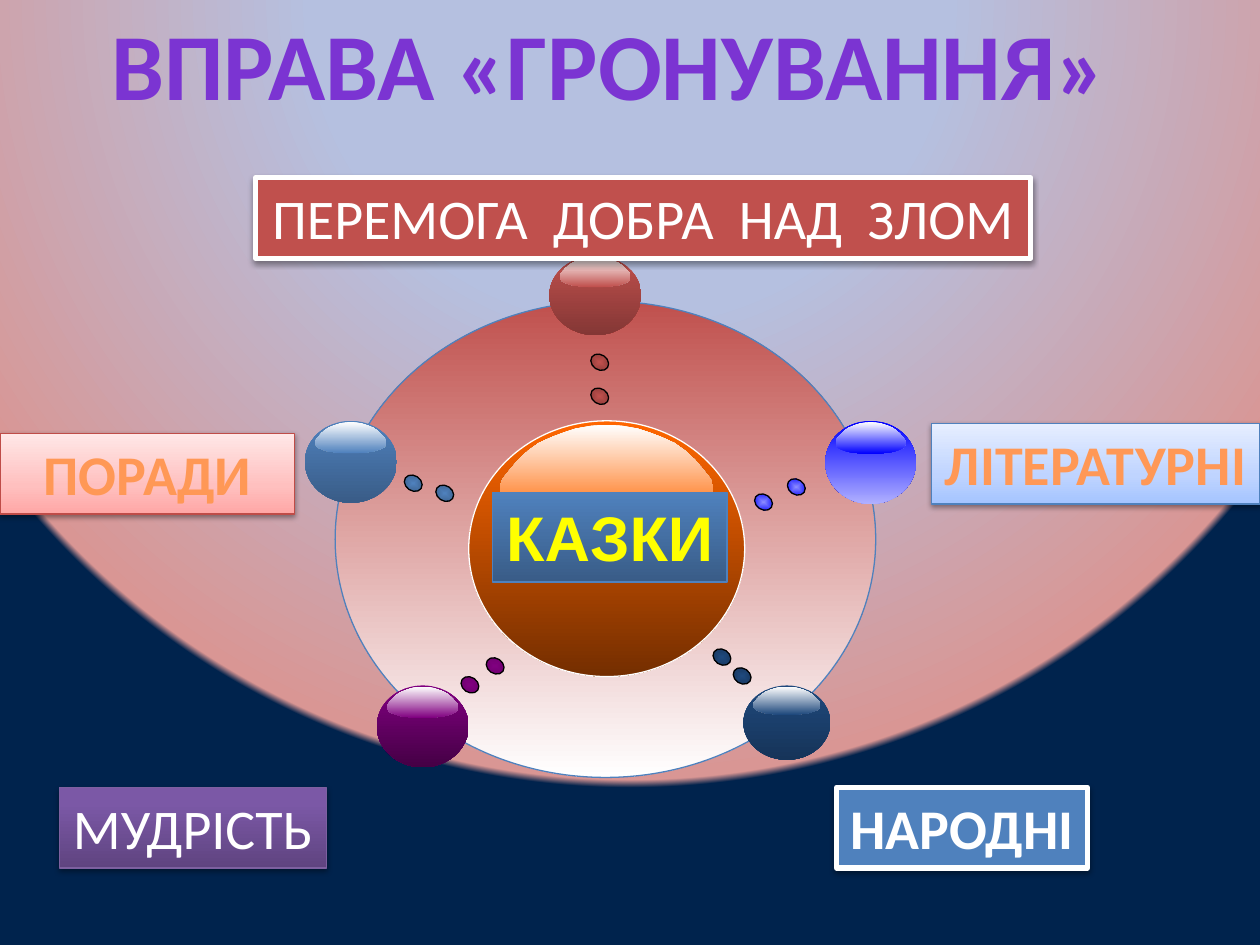
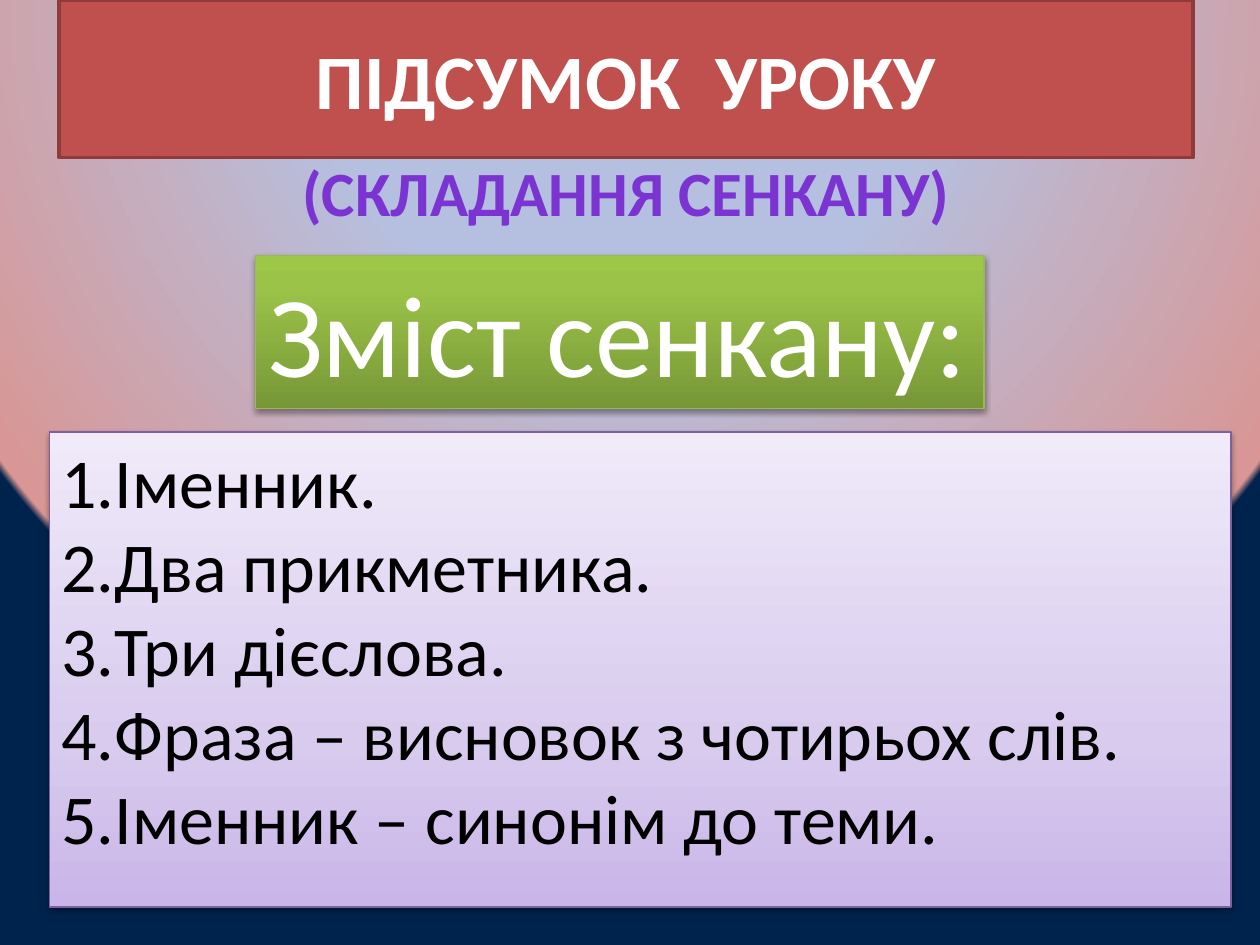
from pptx import Presentation
from pptx.dml.color import RGBColor
from pptx.enum.shapes import MSO_SHAPE
from pptx.enum.text import MSO_ANCHOR, MSO_AUTO_SIZE, PP_ALIGN
from pptx.oxml import parse_xml
from pptx.oxml.ns import nsdecls, qn
from pptx.util import Inches, Pt

BLACK = RGBColor(0x00, 0x00, 0x00)
WHITE = RGBColor(0xFF, 0xFF, 0xFF)
YELLOW = RGBColor(0xFF, 0xFF, 0x00)
VIOLET = RGBColor(0x7B, 0x34, 0xD2)
PEACH = RGBColor(0xFF, 0x98, 0x56)
RED = RGBColor(0xC0, 0x50, 0x4D)
DARK_RED = RGBColor(0x84, 0x37, 0x35)
TITLE_BORDER = RGBColor(0x8E, 0x3B, 0x39)
PINK_BORDER = RGBColor(0xBF, 0x4C, 0x48)
ORANGE = RGBColor(0xFF, 0x66, 0x00)
DARK_ORANGE = RGBColor(0x74, 0x2E, 0x00)
STEEL = RGBColor(0x4F, 0x81, 0xBD)
DARK_STEEL = RGBColor(0x39, 0x5C, 0x87)
NAVY = RGBColor(0x1F, 0x49, 0x7D)
DARK_NAVY = RGBColor(0x16, 0x34, 0x59)
BLUE = RGBColor(0x00, 0x00, 0xFF)
MID_BLUE = RGBColor(0x8A, 0x8A, 0xFF)
PALE_BLUE = RGBColor(0xB0, 0xB0, 0xFF)
PURPLE = RGBColor(0x80, 0x00, 0x80)
DARK_PURPLE = RGBColor(0x45, 0x00, 0x45)
DOT_PURPLE = RGBColor(0x6B, 0x00, 0x6B)
LILAC_BORDER = RGBColor(0x7D, 0x60, 0xA0)
GREEN_BORDER = RGBColor(0x98, 0xB9, 0x55)

BACKGROUND = [(40, RGBColor(0xB5, 0xC0, 0xE0)), (99, RGBColor(0xD9, 0x96, 0x94)),
              (100, RGBColor(0x00, 0x23, 0x4D))]
SKY = [(0, RGBColor(0xA4, 0xC4, 0xFF)), (35, RGBColor(0xBF, 0xD4, 0xFF)),
       (100, RGBColor(0xE6, 0xEE, 0xFF))]
PINK = [(0, RGBColor(0xFF, 0xA6, 0xA5)), (35, RGBColor(0xFF, 0xC0, 0xBF)),
        (100, RGBColor(0xFF, 0xE7, 0xE7))]
LAVENDER = [(0, RGBColor(0xC9, 0xB5, 0xE8)), (35, RGBColor(0xD8, 0xCB, 0xEE)),
            (100, RGBColor(0xF0, 0xEA, 0xF9))]
PLUM = [(0, RGBColor(0x5F, 0x44, 0x80)), (80, RGBColor(0x7B, 0x58, 0xA6)),
        (100, RGBColor(0x7C, 0x57, 0xA8))]
GREEN = [(0, RGBColor(0x77, 0x97, 0x37)), (80, RGBColor(0x9B, 0xC3, 0x48)),
         (100, RGBColor(0x9D, 0xC7, 0x46))]

GLOSS_HALF = [(0, 0), (.14, .01), (.29, .04), (.4, .08), (.52, .13), (.64, .19), (.74, .27),
              (.83, .36), (.9, .45), (.98, .56), (1, .62), (1, .68), (.99, .73), (.96, .78),
              (.93, .82), (.81, .88), (.65, .94), (.46, .97), (.2, 1)]
GLOSS_OUTLINE = GLOSS_HALF + [(-x, y) for x, y in reversed(GLOSS_HALF[1:])]


def gradient(stops, angle=None, focus=(50, 50, 50, 50), kind="circle"):
    stop_xml = "".join(f'<a:gs pos="{position * 1000}"><a:srgbClr val="{color}"/></a:gs>'
                       for position, color in stops)
    if angle is None:
        left, top, right, bottom = (value * 1000 for value in focus)
        shade = (f'<a:path path="{kind}"><a:fillToRect l="{left}" t="{top}" '
                 f'r="{right}" b="{bottom}"/></a:path>')
    else:
        shade = f'<a:lin ang="{angle * 60000}" scaled="0"/>'
    return parse_xml(f'<a:gradFill {nsdecls("a")} rotWithShape="1">'
                     f'<a:gsLst>{stop_xml}</a:gsLst>{shade}</a:gradFill>')


def fade(top, bottom):
    return gradient([(0, top), (100, bottom)], 90)


class Deck:
    font_name = "Calibri"

    def __init__(self):
        self.presentation = Presentation()
        self.presentation.slide_width = Inches(10)
        self.presentation.slide_height = Inches(7.5)
        master = self.presentation.slide_master
        master.background.fill.solid()
        properties = master.element.find(".//" + qn("p:bgPr"))
        properties.replace(properties.find(qn("a:solidFill")),
                           gradient(BACKGROUND, focus=(50, -80, 50, 180)))
        self.slide = None

    def new_slide(self):
        self.slide = self.presentation.slides.add_slide(self.presentation.slide_layouts[5])

    def paint(self, shape, fill, line=None, width=0.75):
        shape.shadow.inherit = False
        if isinstance(fill, RGBColor):
            shape.fill.solid()
            shape.fill.fore_color.rgb = fill
        else:
            shape.fill.background()
            properties = shape.element.spPr
            properties.replace(properties.find(qn("a:noFill")), fill)
        if line is None:
            shape.line.fill.background()
        else:
            shape.line.color.rgb = line
            shape.line.width = Pt(width)

    def set_text(self, shape, lines, size, color, bold=False, align=PP_ALIGN.CENTER,
                 font=None, wrap=False, anchor=MSO_ANCHOR.TOP):
        frame = shape.text_frame
        frame.text = "\n".join(lines)
        frame.word_wrap = wrap
        frame.auto_size = MSO_AUTO_SIZE.NONE
        frame.vertical_anchor = anchor
        for paragraph in frame.paragraphs:
            paragraph.alignment = align
            paragraph.font.name = font or self.font_name
            paragraph.font.size = Pt(size)
            paragraph.font.bold = bold
            paragraph.font.color.rgb = color

    def title(self, box, text, size, color, anchor):
        title = self.slide.shapes.title
        title.left, title.top, title.width, title.height = map(Inches, box)
        self.set_text(title, [text], size, color, True, anchor=anchor)
        return title

    def text(self, box, text, size, color):
        textbox = self.slide.shapes.add_textbox(*map(Inches, box))
        self.set_text(textbox, [text], size, color, True)

    def shape(self, kind, box, fill, line=None, width=0.75):
        shape = self.slide.shapes.add_shape(kind, *map(Inches, box))
        self.paint(shape, fill, line, width)
        return shape

    def label(self, box, lines, size, color, fill, line, width=0.75, shadow=True, **style):
        label = self.shape(MSO_SHAPE.RECTANGLE, box, fill, line, width)
        self.set_text(label, lines, size, color, **style)
        if shadow:
            label.element.spPr.find(qn("a:effectLst")).append(parse_xml(
                f'<a:outerShdw {nsdecls("a")} blurRad="40000" dist="20000" dir="5400000" '
                f'rotWithShape="0"><a:srgbClr val="{BLACK}"><a:alpha val="38000"/>'
                f'</a:srgbClr></a:outerShdw>'))
        return label

    def ball(self, box, color, dark, line=None):
        self.shape(MSO_SHAPE.OVAL, box, fade(color, dark), line)
        left, top, width, height = box
        center, gloss_top = left + width / 2, top + 0.015 * height
        points = [(Inches(center + x * 0.385 * width), Inches(gloss_top + y * 0.38 * height))
                  for x, y in GLOSS_OUTLINE]
        builder = self.slide.shapes.build_freeform(*points[0])
        builder.add_line_segments(points[1:], close=True)
        self.paint(builder.convert_to_shape(), fade(WHITE, color))

    def dot(self, left, top, center, edge):
        fill = gradient([(0, center), (100, edge)], kind="shape")
        dot = self.shape(MSO_SHAPE.OVAL, (left, top, 0.12, 0.15), fill, BLACK)
        dot.rotation = 303.8

    def number(self, shape):
        for paragraph in shape.text_frame.paragraphs:
            properties = paragraph._p.get_or_add_pPr()
            properties.set("marL", str(Inches(0.38)))
            properties.set("indent", str(-Inches(0.38)))
            numbering = parse_xml(f'<a:buAutoNum {nsdecls("a")} type="arabicPeriod"/>')
            properties.insert_element_before(numbering, "a:tabLst", "a:defRPr", "a:extLst")


def build_cluster_slide(deck):
    deck.new_slide()
    deck.title((0.78, 0, 8.11, 1.01), "ВПРАВА «ГРОНУВАННЯ»", 54, VIOLET, MSO_ANCHOR.TOP)
    deck.shape(MSO_SHAPE.OVAL, (2.66, 2.39, 4.29, 3.78), fade(RED, WHITE), STEEL)
    deck.ball((3.72, 3.34, 2.19, 2.03), ORANGE, DARK_ORANGE, WHITE)
    deck.label((3.91, 3.91, 1.86, 0.71), ["КАЗКИ"], 36, YELLOW, fade(STEEL, DARK_STEEL),
               STEEL, shadow=False, bold=True, font="Arial")

    for box, color, dark in [
        ((4.36, 2.03, 0.73, 0.63), RED, DARK_RED),
        ((2.99, 5.44, 0.73, 0.65), PURPLE, DARK_PURPLE),
        ((6.55, 3.34, 0.72, 0.66), BLUE, PALE_BLUE),
        ((5.90, 5.44, 0.69, 0.59), NAVY, DARK_NAVY),
        ((2.42, 3.34, 0.73, 0.65), STEEL, DARK_STEEL),
    ]:
        deck.ball(box, color, dark)

    for center, edge, places in [
        (PURPLE, DOT_PURPLE, [(3.67, 5.36), (3.87, 5.21)]),
        (NAVY, DARK_NAVY, [(5.83, 5.29), (5.67, 5.14)]),
        (STEEL, DARK_STEEL, [(3.22, 3.76), (3.47, 3.84)]),
        (RED, DARK_RED, [(4.7, 2.8), (4.7, 3.07)]),
        (MID_BLUE, BLUE, [(6.26, 3.79), (6, 3.91)]),
    ]:
        for left, top in places:
            deck.dot(left, top, center, edge)

    for box, text, color, bold, fill, line, width in [
        ((7.39, 3.36, 2.61, 0.64), "ЛІТЕРАТУРНІ", PEACH, True, gradient(SKY, 270), STEEL, 0.75),
        ((6.64, 6.25, 1.99, 0.64), "НАРОДНІ", WHITE, True, STEEL, WHITE, 3),
        ((0.47, 6.25, 2.12, 0.64), "МУДРІСТЬ", WHITE, False, gradient(PLUM, 270),
         LILAC_BORDER, 0.75),
        ((2.03, 1.41, 6.15, 0.64), "ПЕРЕМОГА  ДОБРА  НАД  ЗЛОМ", WHITE, False, RED, WHITE, 3),
        ((0, 3.44, 2.34, 0.64), "ПОРАДИ", PEACH, True, gradient(PINK, 270), PINK_BORDER, 0.75),
    ]:
        deck.label(box, [text], 32, color, fill, line, width, bold=bold)


def build_summary_slide(deck):
    deck.new_slide()
    title = deck.title((0.47, 0, 9, 1.25), "ПІДСУМОК  УРОКУ", 44, WHITE, MSO_ANCHOR.MIDDLE)
    deck.paint(title, RED, TITLE_BORDER, 2)
    deck.text((2.27, 1.17, 5.4, 0.71), "(СКЛАДАННЯ СЕНКАНУ)", 36, VIOLET)
    steps = ["Іменник.", "Два прикметника.", "Три дієслова.",
             "Фраза – висновок з чотирьох слів.", "Іменник – синонім до теми."]
    panel = deck.label((0.39, 3.43, 9.38, 3.77), steps, 40, BLACK, gradient(LAVENDER, 270),
                       LILAC_BORDER, align=PP_ALIGN.LEFT, wrap=True)
    deck.number(panel)
    deck.label((2.03, 2.03, 5.78, 1.21), ["Зміст сенкану:"], 66, WHITE, gradient(GREEN, 270),
               GREEN_BORDER, align=PP_ALIGN.LEFT, wrap=True)


def main():
    deck = Deck()
    build_cluster_slide(deck)
    build_summary_slide(deck)
    deck.presentation.save("out.pptx")


if __name__ == "__main__":
    main()
